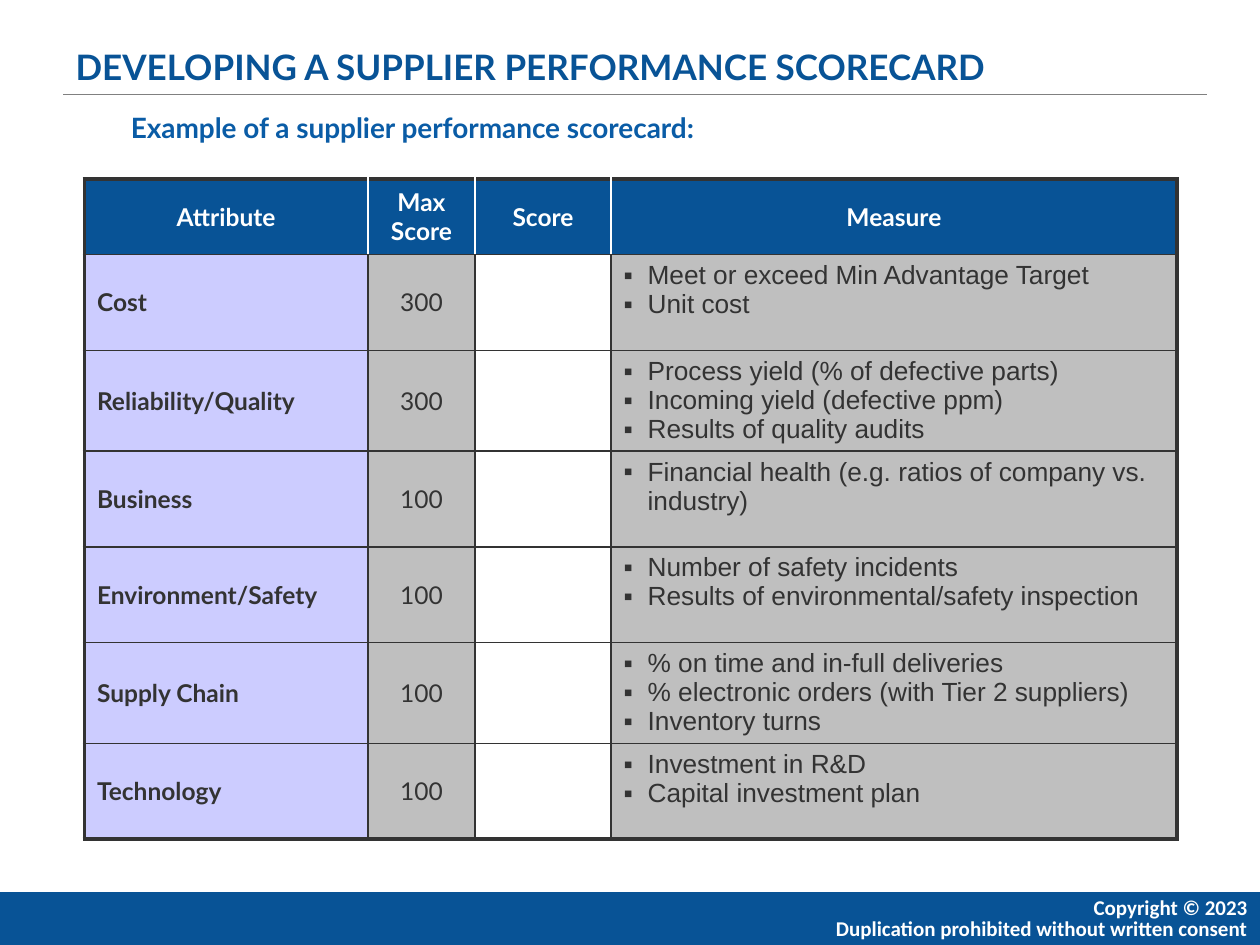
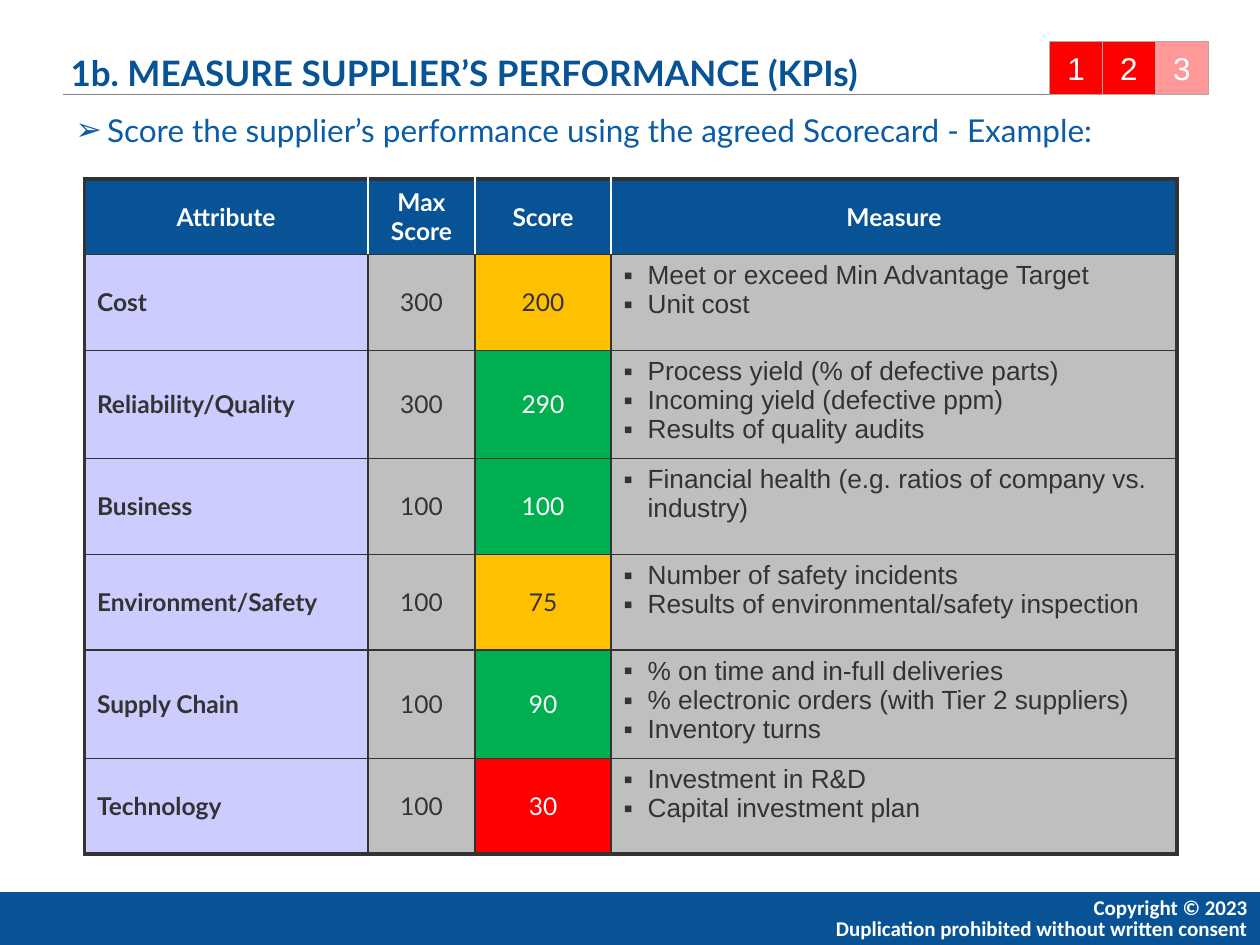
from lxml.etree import SubElement
from pptx import Presentation
from pptx.dml.color import RGBColor
from pptx.enum.shapes import MSO_CONNECTOR, MSO_SHAPE
from pptx.enum.text import MSO_ANCHOR, MSO_AUTO_SIZE, PP_ALIGN
from pptx.oxml.ns import qn
from pptx.util import Inches, Pt

# Content
HEADS = ["Attribute", "Max Score", "Score", "Measure"]
ROWS = [
    ("Cost", 300, ["Meet or exceed Min Advantage Target", "Unit cost"]),
    ("Reliability/Quality", 300, ["Process yield (% of defective parts)",
                                  "Incoming yield (defective ppm)",
                                  "Results of quality audits"]),
    ("Business", 100, ["Financial health (e.g. ratios of company vs. industry)"]),
    ("Environment/Safety", 100, ["Number of safety incidents",
                                 "Results of environmental/safety inspection"]),
    ("Supply Chain", 100, ["% on time and in-full deliveries",
                           "% electronic orders (with Tier 2 suppliers)",
                           "Inventory turns"]),
    ("Technology", 100, ["Investment in R&D", "Capital investment plan"]),
]
SCORES = [200, 290, 100, 75, 90, 30]
STEPS = [("1", "red"), ("2", "red"), ("3", "pink")]
NOTICE = ["Copyright © 2023", "Duplication prohibited without written consent"]

# Look
HUES = {"navy": "085396", "blue": "0A5CA6", "ink": "333333", "white": "FFFFFF",
        "lilac": "CCCCFF", "grey": "BFBFBF", "rule": "808080", "edge": "AAAAAA",
        "amber": "FFC000", "green": "00B050", "red": "FF0000", "pink": "FF9999"}
WIDE, HIGH = 10, 7.5
BAND = 7.08
RULE = 0.75
COLS = [2.25, 0.85, 1.08, 4.49]
HEAD, ROW = 0.6, 0.76
STEP = 0.42
LEFT, MID, RIGHT = PP_ALIGN.LEFT, PP_ALIGN.CENTER, PP_ALIGN.RIGHT


def hue(name):
    return RGBColor.from_string(HUES[name])


def paint(item, name):
    item.fill.solid()
    item.fill.fore_color.rgb = hue(name)


def place(shape, left, top, width, height):
    shape.left, shape.top = Inches(left), Inches(top)
    shape.width, shape.height = Inches(width), Inches(height)


def write(frame, text, size=14, font="Lato", color="ink", bold=False,
          align=LEFT, lead=None, mark=None, hang=0, after=0):
    """Fill a text frame with one line or a list of lines."""
    lines = text if isinstance(text, list) else [text]
    frame.word_wrap = True
    for i, line in enumerate(lines):
        para = frame.paragraphs[0] if i == 0 else frame.add_paragraph()
        para.alignment, para.line_spacing = align, lead
        para.space_before, para.space_after = Pt(0), Pt(after)
        if mark:
            props = para._p.get_or_add_pPr()
            props.set("marL", str(Inches(hang)))
            props.set("indent", str(-Inches(hang)))
            SubElement(props, qn("a:buFont"), typeface="Arial")
            SubElement(props, qn("a:buChar"), char=mark)
        run = para.add_run()
        run.text = line
        run.font.size, run.font.name, run.font.bold = Pt(size), font, bold
        run.font.color.rgb = hue(color)


def frame_cell(cell, row, col):
    """Thick dark outer edges, thin inner ones, white between the heads."""
    last = len(COLS) - 1
    outer = {"L": col == 0, "R": col == last, "T": row == 0, "B": row == len(ROWS)}
    props = cell._tc.get_or_add_tcPr()
    for side, thick in outer.items():
        pale = row == 0 and side in "LR" and not thick
        line = SubElement(props, qn("a:ln" + side), w=str(Pt(2.25 if thick else 1)))
        fill = SubElement(line, qn("a:solidFill"))
        SubElement(fill, qn("a:srgbClr"), val=HUES["white" if pale else "ink"])


def rate(score, top):
    share = score / top
    return "green" if share >= 0.9 else "amber" if share >= 0.5 else "red"


def add_table(slide, scores, tall):
    """Draw the scorecard; tall is the height of rows with three measures."""
    highs = [HEAD] + [tall if len(row[2]) > 2 else ROW for row in ROWS]
    part = slide.shapes.add_table(len(highs), len(COLS), Inches(0.67), Inches(1.42),
                                  Inches(sum(COLS)), Inches(sum(highs)))
    table = part.table
    table.first_row = table.horz_banding = False
    for col, wide in zip(table.columns, COLS):
        col.width = Inches(wide)
    for row, high in zip(table.rows, highs):
        row.height = Inches(high)

    def put(row, col, text, fill, **form):
        cell = table.cell(row, col)
        frame_cell(cell, row, col)
        paint(cell, fill)
        listed = isinstance(text, list)
        cell.vertical_anchor = MSO_ANCHOR.TOP if listed else MSO_ANCHOR.MIDDLE
        if text:
            write(cell.text_frame, text, **form)

    for col, head in enumerate(HEADS):
        put(0, col, head, "navy", color="white", bold=True, align=MID)
    for i, (name, top, goals) in enumerate(ROWS, 1):
        put(i, 0, name, "lilac", bold=True)
        put(i, 1, str(top), "grey", align=MID)
        if scores:
            tone = rate(scores[i - 1], top)
            put(i, 2, str(scores[i - 1]), tone, align=MID,
                color="ink" if tone == "amber" else "white")
        else:
            put(i, 2, "", "white")
        put(i, 3, goals, "grey", size=15, font="Arial", mark="▪", hang=0.19)


def add_box(shapes, left, top, width, height, fill):
    box = shapes.add_shape(MSO_SHAPE.RECTANGLE, Inches(left), Inches(top),
                           Inches(width), Inches(height))
    box.shadow.inherit = False
    paint(box, fill)
    box.line.fill.background()
    return box


def add_text(slide, left, top, width, height, text, **form):
    box = slide.shapes.add_textbox(0, 0, 0, 0)
    place(box, left, top, width, height)
    write(box.text_frame, text, **form)


def set_title(slide, text, *spot):
    title = slide.shapes.title
    place(title, *spot)
    frame = title.text_frame
    frame.auto_size = MSO_AUTO_SIZE.NONE
    frame.vertical_anchor = MSO_ANCHOR.BOTTOM
    write(frame, text, size=20, color="navy", bold=True, lead=0.9)


def set_master(deck, slide):
    """Draw the band, rule and notice, then move them to the master."""
    old = len(slide.shapes)
    add_box(slide.shapes, 0, BAND, WIDE, HIGH - BAND, "navy")
    line = slide.shapes.add_connector(MSO_CONNECTOR.STRAIGHT, Inches(0.5),
                                      Inches(RULE), Inches(9.58), Inches(RULE))
    line.line.color.rgb, line.line.width = hue("rule"), Pt(1)
    SubElement(line.element.spPr, qn("a:effectLst"))
    add_text(slide, WIDE * 0.55, BAND, WIDE * 0.45, 0.45, NOTICE, size=12,
             font="Calibri", color="white", bold=True, align=RIGHT, lead=0.85)
    tree = deck.slide_master.element.cSld.spTree
    for shape in list(slide.shapes)[old:]:
        tree.append(shape.element)


def add_steps(slide):
    group = slide.shapes.add_group_shape()
    for i, (text, fill) in enumerate(STEPS):
        box = add_box(group.shapes, 8.33 + i * STEP, RULE - STEP, STEP, STEP, fill)
        box.line.color.rgb, box.line.width = hue("edge"), Pt(0.25)
        box.text_frame.vertical_anchor = MSO_ANCHOR.MIDDLE
        write(box.text_frame, text, size=18, font="Arial", color="white", align=MID)


def main():
    deck = Presentation()
    deck.slide_width, deck.slide_height = Inches(WIDE), Inches(HIGH)

    # Blank scorecard
    slide = deck.slides.add_slide(deck.slide_layouts[5])
    set_master(deck, slide)
    set_title(slide, "DEVELOPING A SUPPLIER PERFORMANCE SCORECARD",
              0.5, 0.25, 7.92, 0.5)
    add_table(slide, None, tall=0.8)
    add_text(slide, 0.58, 0.83, 5.39, 0.37,
             "Example of a supplier performance scorecard:",
             size=16, color="blue", bold=True, align=MID)

    # Scored example
    slide = deck.slides.add_slide(deck.slide_layouts[1])
    set_title(slide, "1b. MEASURE SUPPLIER’S PERFORMANCE (KPIs)",
              0.46, 0.38, 9.08, 0.42)
    body = slide.placeholders[1]
    place(body, 0.5, 0.83, 9.08, 2.17)
    body.text_frame.auto_size = MSO_AUTO_SIZE.NONE
    write(body.text_frame,
          "Score the supplier’s performance using the agreed Scorecard - Example:",
          size=18, color="blue", mark="➢", hang=0.25, after=6)
    add_table(slide, SCORES, tall=0.86)
    add_steps(slide)

    deck.save("out.pptx")


if __name__ == "__main__":
    main()
